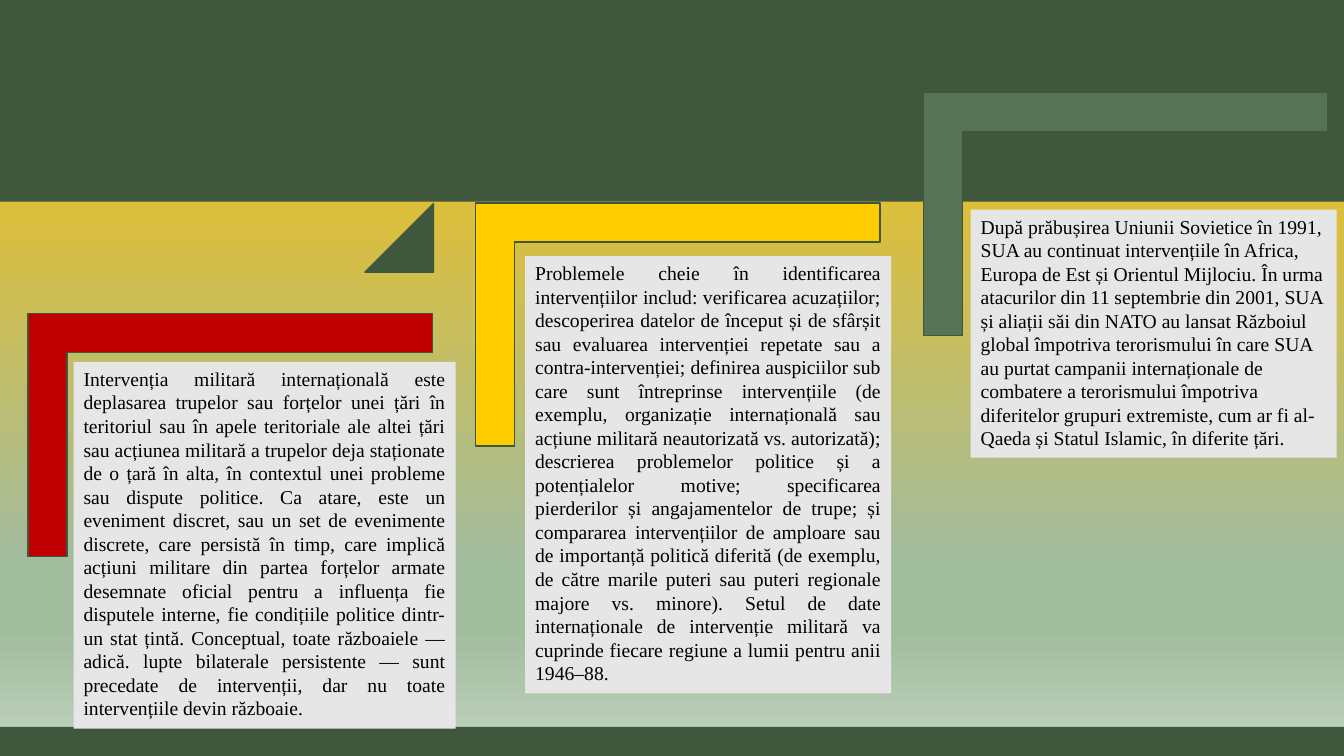
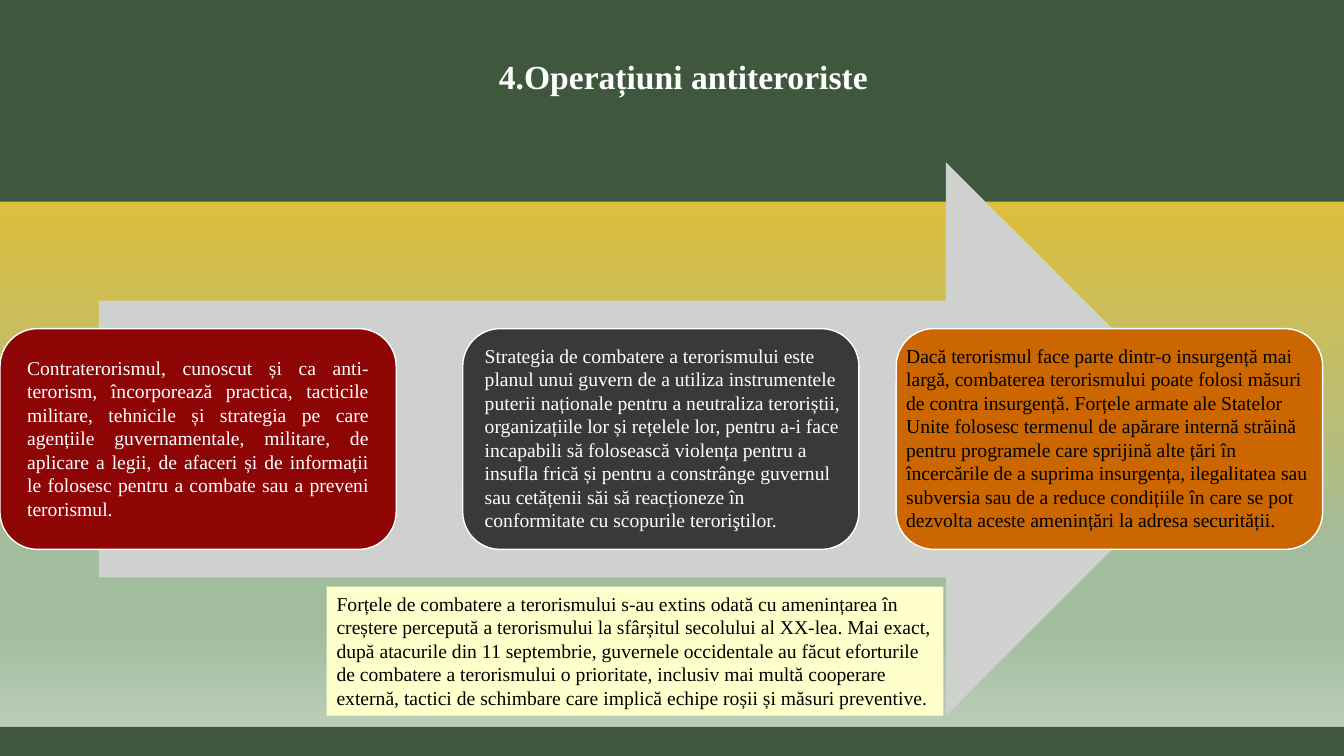
import copy
from dataclasses import dataclass

import pptx
import pptx.dml.color
import pptx.enum.shapes
import pptx.enum.text
import pptx.util
from pptx.oxml.ns import qn

SHAPE = pptx.enum.shapes.MSO_SHAPE
ALIGN = pptx.enum.text.PP_ALIGN


@dataclass(frozen=True)
class Theme:
    font: str = "Times New Roman"
    title_size: int = 24
    body_size: int = 14
    forest: str = "3F573C"
    moss: str = "577356"
    red: str = "C00000"
    yellow: str = "FFCC00"
    panel: str = "E7E6E6"
    arrow: str = "CFD1CE"
    wine: str = "8E0506"
    charcoal: str = "3B3838"
    orange: str = "CC6600"
    cream: str = "FFFFCC"
    white: str = "FFFFFF"
    black: str = "000000"
    backdrop: tuple = ((0, "FFC000"), (74, "A2BC9E"), (83, "A2BC9E"), (100, "C1D3BF"))


THEME = Theme()
SLIDE_WIDTH = pptx.util.Inches(13.33)
SLIDE_HEIGHT = pptx.util.Inches(7.5)

BANDS = [(0, 0, 100, 26.67), (0, 96.13, 100, 3.87)]

STEP_BOX = (8.1, 30.8, 18.08, 53.47)
STEP_MARK_BOX = (27.15, 26.93, 5.1, 9.07)
STEP_SHIFT = (33.3, -14.6)
STEP_COLORS = [THEME.red, THEME.yellow, THEME.moss]

INTERVENTIONS = [
    ((5.48, 47.87, 28.43, 48.53), ALIGN.JUSTIFY,
     "Intervenția militară internațională este deplasarea trupelor sau forțelor unei țări în "
     "teritoriul sau în apele teritoriale ale altei țări sau acțiunea militară a trupelor deja "
     "staționate de o țară în alta, în contextul unei probleme sau dispute politice. Ca atare, "
     "este un eveniment discret, sau un set de evenimente discrete, care persistă în timp, care "
     "implică acțiuni militare din partea forțelor armate desemnate oficial pentru a influența "
     "fie disputele interne, fie condițiile politice dintr-un stat țintă. Conceptual, toate "
     "războaiele — adică. lupte bilaterale persistente — sunt precedate de intervenții, dar nu "
     "toate intervențiile devin războaie."),
    ((39.08, 33.87, 27.23, 57.87), ALIGN.JUSTIFY,
     "Problemele cheie în identificarea intervențiilor includ: verificarea acuzațiilor; "
     "descoperirea datelor de început și de sfârșit sau evaluarea intervenției repetate sau a "
     "contra-intervenției; definirea auspiciilor sub care sunt întreprinse intervențiile (de "
     "exemplu, organizație internațională sau acțiune militară neautorizată vs. autorizată); "
     "descrierea problemelor politice și a potențialelor motive; specificarea pierderilor și "
     "angajamentelor de trupe; și compararea intervențiilor de amploare sau de importanță "
     "politică diferită (de exemplu, de către marile puteri sau puteri regionale majore vs. "
     "minore). Setul de date internaționale de intervenție militară va cuprinde fiecare regiune "
     "a lumii pentru anii 1946–88."),
    ((72.23, 27.73, 27.23, 32.8), ALIGN.LEFT,
     "După prăbușirea Uniunii Sovietice în 1991, SUA au continuat intervențiile în Africa, "
     "Europa de Est și Orientul Mijlociu. În urma atacurilor din 11 septembrie din 2001, SUA și "
     "aliații săi din NATO au lansat Războiul global împotriva terorismului în care SUA au "
     "purtat campanii internaționale de combatere a terorismului împotriva diferitelor grupuri "
     "extremiste, cum ar fi al-Qaeda și Statul Islamic, în diferite țări."),
]

TITLE = "4.Operațiuni antiteroriste"
TITLE_BOX = (36.38, 6.8, 29.18, 6.67)
ARROW_BOX = (7.35, 21.47, 83.63, 73.2)
CARD_TOP, CARD_HEIGHT, CARD_ROUNDING = 43.47, 29.2, 0.17

STRATEGIES = [
    (0, 29.48, THEME.wine, (1.28, 46.4, 26.93, 23.33), THEME.white, ALIGN.JUSTIFY,
     "Contraterorismul, cunoscut și ca anti-terorism, încorporează practica, tacticile militare, "
     "tehnicile și strategia pe care agențiile guvernamentale, militare, de aplicare a legii, de "
     "afaceri și de informații le folosesc pentru a combate sau a preveni terorismul."),
    (34.43, 29.48, THEME.charcoal, (35.33, 44.8, 28.65, 26.53), THEME.white, ALIGN.LEFT,
     "Strategia de combatere a terorismului este planul unui guvern de a utiliza instrumentele "
     "puterii naționale pentru a neutraliza teroriștii, organizațiile lor și rețelele lor, "
     "pentru a-i face incapabili să folosească violența pentru a insufla frică și pentru a "
     "constrânge guvernul sau cetățenii săi să reacționeze în conformitate cu scopurile "
     "teroriştilor."),
    (66.68, 31.73, THEME.orange, (66.68, 44.8, 32.25, 26.53), THEME.black, ALIGN.LEFT,
     "Dacă terorismul face parte dintr-o insurgență mai largă, combaterea terorismului poate "
     "folosi măsuri de contra insurgență. Forțele armate ale Statelor Unite folosesc termenul de "
     "apărare internă străină pentru programele care sprijină alte țări în încercările de a "
     "suprima insurgența, ilegalitatea sau subversia sau de a reduce condițiile în care se pot "
     "dezvolta aceste amenințări la adresa securității."),
]

FORCES_BOX = (24.3, 77.6, 45.9, 17.07)
FORCES = (
    "Forțele de combatere a terorismului s-au extins odată cu amenințarea în creștere percepută "
    "a terorismului la sfârșitul secolului al XX-lea. Mai exact, după atacurile din 11 "
    "septembrie, guvernele occidentale au făcut eforturile de combatere a terorismului o "
    "prioritate, inclusiv mai multă cooperare externă, tactici de schimbare care implică echipe "
    "roșii și măsuri preventive."
)


def rgb(color):
    return pptx.dml.color.RGBColor.from_string(color)


def place(box):
    sides = (SLIDE_WIDTH, SLIDE_HEIGHT) * 2
    return [round(side * share / 100) for side, share in zip(sides, box)]


def add_figure(slide, preset, box, fill, line=None, rotation=0, adjustments=()):
    figure = slide.shapes.add_shape(preset, *place(box))
    figure.shadow.inherit = False
    figure.rotation = rotation
    figure.fill.solid()
    figure.fill.fore_color.rgb = rgb(fill)
    if line:
        figure.line.color.rgb = rgb(line)
        figure.line.width = pptx.util.Pt(1)
    else:
        figure.line.fill.background()
    for index, value in enumerate(adjustments):
        figure.adjustments[index] = value
    return figure


def add_text(slide, text, box, color=THEME.black, size=THEME.body_size, bold=False,
             align=ALIGN.LEFT, fill=None, wrap=True):
    block = slide.shapes.add_textbox(*place(box))
    if fill:
        block.fill.solid()
        block.fill.fore_color.rgb = rgb(fill)
    frame = block.text_frame
    frame.word_wrap = wrap
    frame.auto_size = pptx.enum.text.MSO_AUTO_SIZE.SHAPE_TO_FIT_TEXT
    paragraph = frame.paragraphs[0]
    paragraph.alignment = align
    run = paragraph.add_run()
    run.text = text
    run.font.name = THEME.font
    run.font.size = pptx.util.Pt(size)
    run.font.bold = bold
    run.font.color.rgb = rgb(color)


def style_master(master, slide):
    backdrop = master.background.fill
    backdrop.gradient()
    backdrop.gradient_angle = 270
    stops = master.element.find(".//" + qn("a:gsLst"))
    for _ in THEME.backdrop[len(stops):]:
        stops.append(copy.deepcopy(stops[0]))
    for stop, (position, color) in zip(backdrop.gradient_stops, THEME.backdrop):
        stop.position = position / 100
        stop.color.rgb = rgb(color)
    for index, box in enumerate(BANDS):
        band = add_figure(slide, SHAPE.RECTANGLE, box, THEME.forest)
        master.shapes.element.insert(2 + index, band.element)


def build_interventions(slide):
    def shifted(box, step):
        left, top, width, height = box
        return left + step * STEP_SHIFT[0], top + step * STEP_SHIFT[1], width, height

    for step, color in enumerate(STEP_COLORS):
        add_figure(slide, SHAPE.CORNER, shifted(STEP_BOX, step), color, line=THEME.forest,
                   rotation=90, adjustments=(0.16, 0.16))
        if step < len(STEP_COLORS) - 1:
            add_figure(slide, SHAPE.ISOSCELES_TRIANGLE, shifted(STEP_MARK_BOX, step),
                       THEME.forest, line=THEME.forest, adjustments=(1,))
    for box, align, text in INTERVENTIONS:
        add_text(slide, text, box, align=align, fill=THEME.panel)


def build_strategies(slide):
    add_text(slide, TITLE, TITLE_BOX, color=THEME.white, size=THEME.title_size, bold=True,
             wrap=False)
    add_figure(slide, SHAPE.RIGHT_ARROW, ARROW_BOX, THEME.arrow)
    for left, width, fill, text_box, color, align, text in STRATEGIES:
        add_figure(slide, SHAPE.ROUNDED_RECTANGLE, (left, CARD_TOP, width, CARD_HEIGHT), fill,
                   line=THEME.white, adjustments=(CARD_ROUNDING,))
        add_text(slide, text, text_box, color=color, align=align)
    add_text(slide, FORCES, FORCES_BOX, fill=THEME.cream)


def main():
    deck = pptx.Presentation()
    deck.slide_width, deck.slide_height = SLIDE_WIDTH, SLIDE_HEIGHT
    blank = deck.slide_layouts[6]
    interventions, strategies = (deck.slides.add_slide(blank) for _ in range(2))
    style_master(deck.slide_master, interventions)
    build_interventions(interventions)
    build_strategies(strategies)
    deck.save("out.pptx")


if __name__ == "__main__":
    main()
